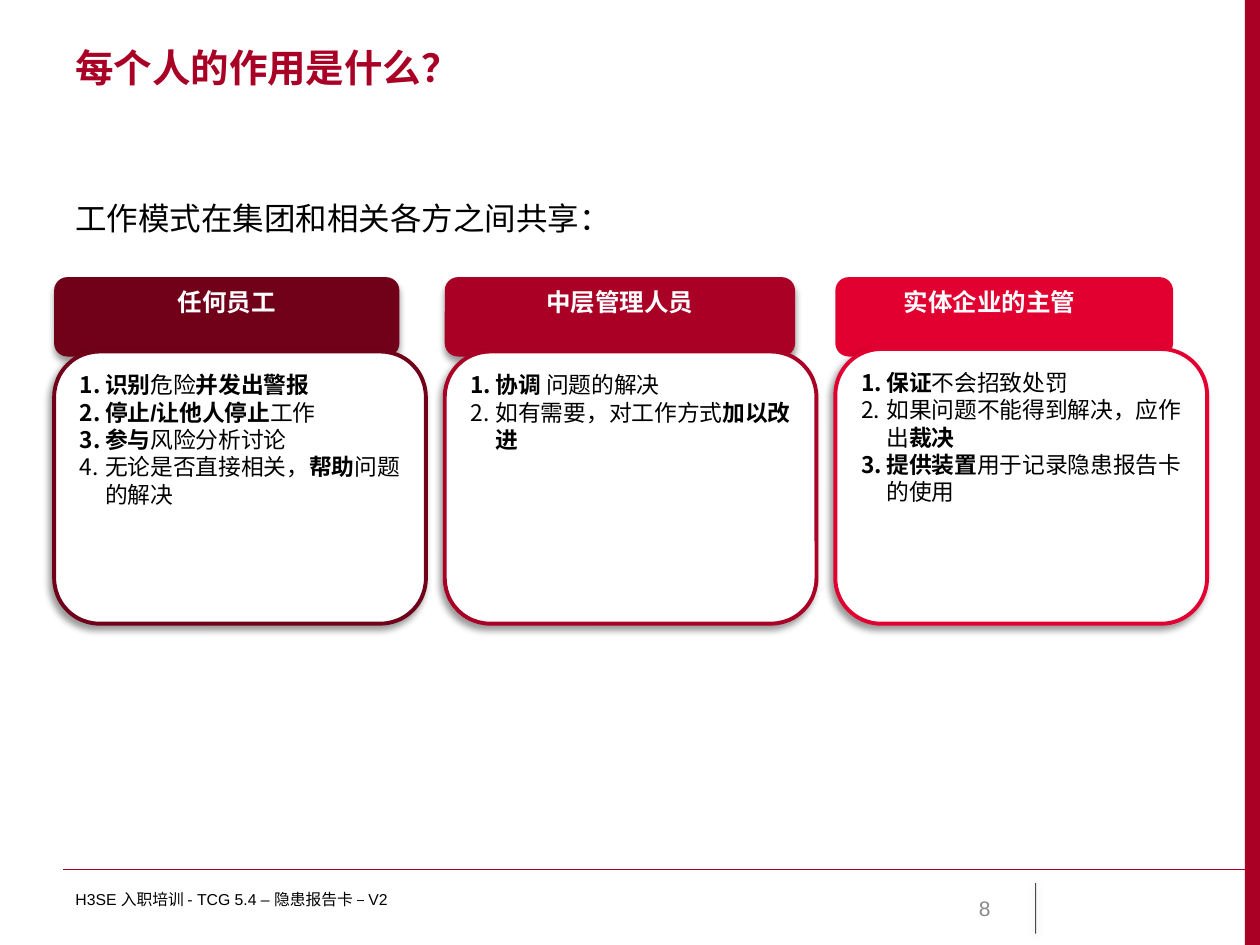
from dataclasses import dataclass

from pptx import Presentation
from pptx.dml.color import RGBColor
from pptx.enum.shapes import MSO_CONNECTOR, MSO_SHAPE
from pptx.enum.text import MSO_ANCHOR, PP_ALIGN
from pptx.oxml import parse_xml
from pptx.oxml.ns import nsdecls, qn
from pptx.util import Emu, Inches, Pt

RECT, ROUND = MSO_SHAPE.RECTANGLE, MSO_SHAPE.ROUNDED_RECTANGLE
PROCESS = MSO_SHAPE.FLOWCHART_ALTERNATE_PROCESS
STRAIGHT = MSO_CONNECTOR.STRAIGHT
LEFT, CENTER, RIGHT = PP_ALIGN.LEFT, PP_ALIGN.CENTER, PP_ALIGN.RIGHT
TOP, MIDDLE = MSO_ANCHOR.TOP, MSO_ANCHOR.MIDDLE

WIDTH, HEIGHT = Inches(10), Inches(7.5)
COLS, ROWS = 100, 75
FONT = "Arial"
RED, BLACK, WHITE, GREY = "AA0025", "000000", "FFFFFF", "898989"
CARD_LEFT, CARD_PITCH, CARD_WIDTH, CARD_BOTTOM = 4.3, 31, 29.5, 49.5
HEAD_TOP, HEAD_HEIGHT = 22, 6.3

Run = tuple[str, bool]


@dataclass
class Card:
    """A role with its coloured header and numbered duties."""
    title: str
    color: str
    head_width: float
    duties: list[list[Run]]
    body_top: float = 27.9
    head_shape: int = ROUND
    head_shadow: bool = True
    wrap: bool = True
    right_inset: float = 1


CARDS = [
    Card("任何员工", "710019", 27.4, [
        [("识别", True), ("危险", False), ("并发出警报", True)],
        [("停止/让他人停止", True), ("工作", False)],
        [("参与", True), ("风险分析讨论", False)],
        [("无论是否直接相关，", False), ("帮助", True), ("问题的解决", False)],
    ], head_shape=PROCESS),
    Card("中层管理人员", RED, 27.8, [
        [("协调 ", True), ("问题的解决", False)],
        [("如有需要，对工作方式", False), ("加以改进", True)],
    ], wrap=False),
    Card("实体企业的主管", "E20031", 26.8, [
        [("保证", True), ("不会招致处罚", False)],
        [("如果问题不能得到解决，应作出", False), ("裁决", True)],
        [("提供装置", True), ("用于记录隐患报告卡的使用", False)],
    ], body_top=27.7, head_shadow=False, right_inset=3.3),
]


def x(cols: float) -> Emu:
    """Return the length of a number of grid columns."""
    return Emu(round(WIDTH * cols / COLS))


def y(rows: float) -> Emu:
    """Return the length of a number of grid rows."""
    return Emu(round(HEIGHT * rows / ROWS))


def rgb(value: str) -> RGBColor:
    """Turn a hex string into a colour."""
    return RGBColor.from_string(value)


def add_shadow(sp, alpha: int, blur: float, dist: float, angle: int) -> None:
    """Give a shape an outer shadow."""
    sp._element.spPr.append(parse_xml(
        f'<a:effectLst {nsdecls("a")}><a:outerShdw blurRad="{Pt(blur)}" '
        f'dist="{Pt(dist)}" dir="{angle * 60000}" rotWithShape="0">'
        f'<a:srgbClr val="{BLACK}"><a:alpha val="{alpha * 1000}"/></a:srgbClr>'
        '</a:outerShdw></a:effectLst>'))


def add_box(s, kind: int, left: float, top: float, width: float, height: float,
            fill: str, line: str | None = None, shadow: int | None = None):
    """Draw a filled shape, with a shadow falling at the given angle."""
    sp = s.shapes.add_shape(kind, x(left), y(top), x(width), y(height))
    sp.fill.solid()
    sp.fill.fore_color.rgb = rgb(fill)
    if line:
        sp.line.color.rgb = rgb(line)
        sp.line.width = Pt(2.25)
    else:
        sp.line.fill.background()
    if shadow is None:
        sp.shadow.inherit = False
    else:
        add_shadow(sp, 40, 4, 3, shadow)
    return sp


def add_line(s, start: tuple[float, float], end: tuple[float, float],
             color: str, width: float):
    """Draw a straight line between two grid points."""
    line = s.shapes.add_connector(STRAIGHT, x(start[0]), y(start[1]),
                                  x(end[0]), y(end[1]))
    line.line.color.rgb = rgb(color)
    line.line.width = Pt(width)
    return line


def number(p) -> None:
    """Make a paragraph an item of a numbered list."""
    pPr = p._p.get_or_add_pPr()
    pPr.set("marL", str(Inches(0.2)))
    pPr.set("indent", str(-Inches(0.2)))
    pPr.append(parse_xml(f'<a:buAutoNum {nsdecls("a")} type="arabicPeriod"/>'))


def write(sp, paragraphs: list[list[Run]], *, size: float, color: str = BLACK,
          align: int = LEFT, anchor: int = TOP, wrap: bool = True,
          numbered: bool = False) -> None:
    """Write paragraphs of plain and bold runs into a shape."""
    tf = sp.text_frame
    tf.word_wrap = wrap
    tf.vertical_anchor = anchor
    for i, runs in enumerate(paragraphs):
        p = tf.add_paragraph() if i else tf.paragraphs[0]
        p.alignment = align
        if numbered:
            number(p)
        for text, bold in runs:
            r = p.add_run()
            r.text = text
            r.font.name = FONT
            r.font.size = Pt(size)
            r.font.bold = bold
            r.font.color.rgb = rgb(color)


def add_text(s, text: str, left: float, top: float, width: float,
             height: float, *, bold: bool = False, **fmt) -> None:
    """Add a text box with one line of text."""
    sp = s.shapes.add_textbox(x(left), y(top), x(width), y(height))
    write(sp, [[(text, bold)]], **fmt)


def add_card(s, card: Card, column: int) -> None:
    """Draw a role card in its column."""
    left = CARD_LEFT + column * CARD_PITCH
    head = add_box(s, card.head_shape, left, HEAD_TOP, card.head_width,
                   HEAD_HEIGHT, card.color,
                   shadow=90 if card.head_shadow else None)
    head.text_frame.margin_right = x(card.right_inset)
    write(head, [[(card.title, True)]], size=14, color=WHITE, align=CENTER,
          wrap=card.wrap)
    body = add_box(s, ROUND, left, card.body_top, CARD_WIDTH,
                   CARD_BOTTOM - card.body_top, WHITE, card.color, 135)
    write(body, card.duties, size=13, numbered=True)


def add_frame(s) -> None:
    """Draw the side band, the footer rule and the page divider."""
    add_box(s, RECT, 98.8, 0, 1.2, ROWS, RED)
    rule = add_line(s, (5, 69), (COLS, 69), RED, 0.75)
    rule._element.spPr.append(parse_xml(f'<a:effectLst {nsdecls("a")}/>'))
    divider = add_line(s, (82.2, 70.1), (82.2, 74.1), BLACK, 0.5)
    tint = divider._element.spPr.find(".//" + qn("a:srgbClr"))
    tint.append(parse_xml(f'<a:alpha {nsdecls("a")} val="70000"/>'))
    add_shadow(divider, 38, 5, 1.6, 90)


def main() -> None:
    """Build the slide and save it."""
    prs = Presentation()
    prs.slide_width, prs.slide_height = WIDTH, HEIGHT
    s = prs.slides.add_slide(prs.slide_layouts[6])
    add_frame(s)
    add_text(s, "每个人的作用是什么？", 5, 3, 89.9, 6.9, size=22,
             color="A90025", bold=True)
    add_text(s, "8", 71.7, 70.1, 7.9, 4, size=12, color=GREY, align=RIGHT,
             anchor=MIDDLE)
    for column, card in enumerate(CARDS):
        add_card(s, card, column)
    add_text(s, "工作模式在集团和相关各方之间共享：", 5, 15.3, 90.9, 4,
             size=18, wrap=False)
    add_text(s, "H3SE 入职培训 - TCG 5.4 – 隐患报告卡 – V2", 5, 70.1, 60.8, 4,
             size=9)
    prs.save("out.pptx")


if __name__ == "__main__":
    main()
